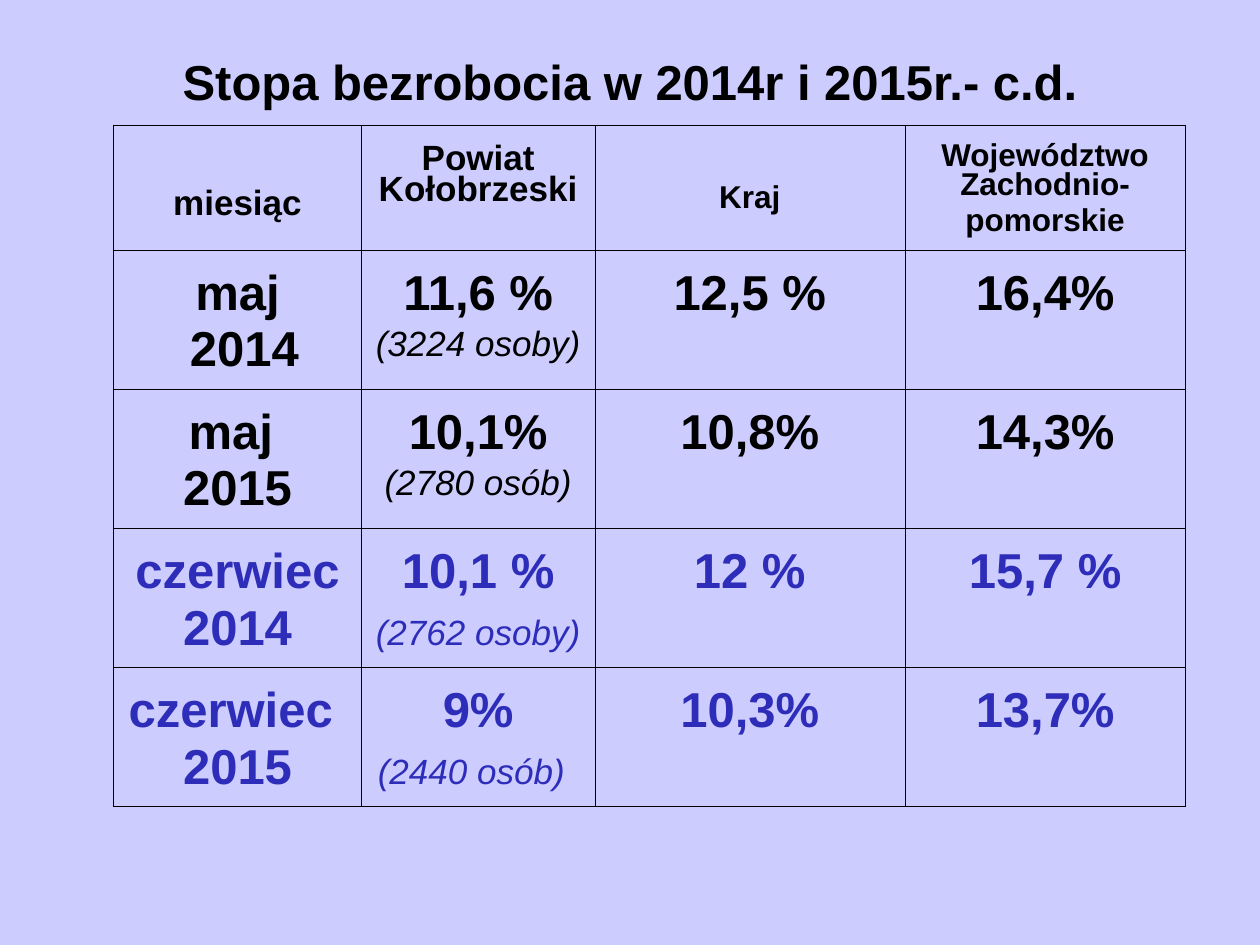
from lxml.etree import SubElement
from pptx import Presentation
from pptx.dml.color import RGBColor as RGB
from pptx.enum.text import MSO_ANCHOR as Anchor, PP_ALIGN as Align
from pptx.oxml.ns import qn
from pptx.util import Inches, Pt

COLORS = {"background": "CCCCFF", "text": "000000", "june": "2D2DB9", "border": "000000"}
WIDTH, HEIGHT = Inches(10), Inches(7.5)
COLUMN_WIDTHS = [1.97, 1.85, 2.46, 2.23]
ROW_HEIGHTS = [0.94] + [1.05] * 4
OUTER_LINE, INNER_LINE = Pt(0.23), Pt(0.11)

BOLD = {"size": Pt(28), "bold": True, "italic": False}
COUNT = {"size": Pt(20), "bold": False, "italic": True}

# Header cells: paragraphs, font size, top inset, space before
HEADERS = [
    (["miesiąc"], 20, 0.52, 4.5),
    (["Powiat Kołobrzeski"], 20, 0.16, 5),
    (["Kraj"], 18, 0.48, 4.5),
    (["Województwo Zachodnio-", "pomorskie"], 18, 0.15, 4.5),
]

# Month, year, county rate, number of people, text after it, country, voivodeship, colour
RATES = [
    ("maj", " 2014", "11,6 %", "(3224 osoby)", "", "12,5 %", "16,4%", "text"),
    ("maj ", "2015", "10,1%", "(2780 osób)", "", "10,8%", "14,3%", "text"),
    ("czerwiec", "2014", "10,1 %", "(2762 osoby)", " ", "12 %", "15,7 %", "june"),
    ("czerwiec ", "2015", "9%", "(2440 osób)", " ", "10,3%", "13,7%", "june"),
]


def add_run(paragraph, text, color, font_format):
    run = paragraph.add_run()
    run.text = text
    run.font.name = "Arial"
    run.font.color.rgb = RGB.from_string(COLORS[color])
    for name, value in font_format.items():
        setattr(run.font, name, value)


def fill_cell(cell, paragraphs, color, inset, space):
    """Each paragraph is a list of (text, font format) pairs."""
    cell.fill.background()
    cell_format = {
        "margin_left": Inches(0.1), "margin_right": Inches(0.1),
        "margin_top": Inches(inset), "margin_bottom": Inches(0.05),
        "vertical_anchor": Anchor.TOP,
    }
    for name, value in cell_format.items():
        setattr(cell, name, value)
    frame = cell.text_frame
    for index, runs in enumerate(paragraphs):
        paragraph = frame.add_paragraph() if index else frame.paragraphs[0]
        paragraph.alignment = Align.CENTER
        paragraph.line_spacing = 0.81
        paragraph.space_before = Pt(space)
        for text, font_format in runs:
            add_run(paragraph, text, color, font_format)


def set_borders(cell, row, column):
    outer_sides = {
        "lnL": column == 0,
        "lnR": column == len(COLUMN_WIDTHS) - 1,
        "lnT": row == 0,
        "lnB": row == len(ROW_HEIGHTS) - 1,
    }
    properties = cell._tc.get_or_add_tcPr()
    for position, (side, is_outer) in enumerate(outer_sides.items()):
        line = SubElement(properties, qn(f"a:{side}"),
                          w=str(OUTER_LINE if is_outer else INNER_LINE))
        fill = SubElement(line, qn("a:solidFill"))
        SubElement(fill, qn("a:srgbClr"), val=COLORS["border"])
        # Borders come before the cell fill in the schema
        properties.insert(position, line)


def add_title(slide, left, top, width, height):
    frame = slide.shapes.add_textbox(left, top, width, height).text_frame
    frame.word_wrap = True
    frame.vertical_anchor = Anchor.MIDDLE
    paragraph = frame.paragraphs[0]
    paragraph.alignment = Align.CENTER
    add_run(paragraph, "Stopa bezrobocia w 2014r i 2015r.- c.d.", "text", BOLD)


def add_rate_table(slide, left, top, width, height):
    table = slide.shapes.add_table(
        len(ROW_HEIGHTS), len(COLUMN_WIDTHS), left, top, width, height).table
    table.first_row = table.horz_banding = False
    for column, share in zip(table.columns, COLUMN_WIDTHS):
        column.width = int(width * share / sum(COLUMN_WIDTHS))
    for row, share in zip(table.rows, ROW_HEIGHTS):
        row.height = int(height * share / sum(ROW_HEIGHTS))

    # Header row
    for column, (lines, size, inset, space) in enumerate(HEADERS):
        header_format = {**BOLD, "size": Pt(size)}
        fill_cell(table.cell(0, column), [[(line, header_format)] for line in lines],
                  "text", inset, space)

    # One row per month
    for row, (month, year, county, people, tail, country, region, color) in enumerate(RATES, 1):
        people_runs = [(people, COUNT)] + ([(tail, BOLD)] if tail else [])
        contents = [
            [[(month, BOLD)], [(year, BOLD)]],
            [[(county, BOLD)], people_runs],
            [[(country, BOLD)]],
            [[(region, BOLD)]],
        ]
        for column, paragraphs in enumerate(contents):
            fill_cell(table.cell(row, column), paragraphs, color, 0.2, 7)

    for row in range(len(ROW_HEIGHTS)):
        for column in range(len(COLUMN_WIDTHS)):
            set_borders(table.cell(row, column), row, column)


def main():
    deck = Presentation()
    deck.slide_width, deck.slide_height = WIDTH, HEIGHT
    slide = deck.slides.add_slide(deck.slide_layouts[6])
    background = slide.background.fill
    background.solid()
    background.fore_color.rgb = RGB.from_string(COLORS["background"])

    add_title(slide, int(WIDTH * 0.05), int(HEIGHT * 0.04), int(WIDTH * 0.9), Inches(0.69))
    add_rate_table(slide, int(WIDTH * 0.09), Inches(0.99),
                   Inches(sum(COLUMN_WIDTHS)), Inches(sum(ROW_HEIGHTS)))
    deck.save("out.pptx")


if __name__ == "__main__":
    main()
